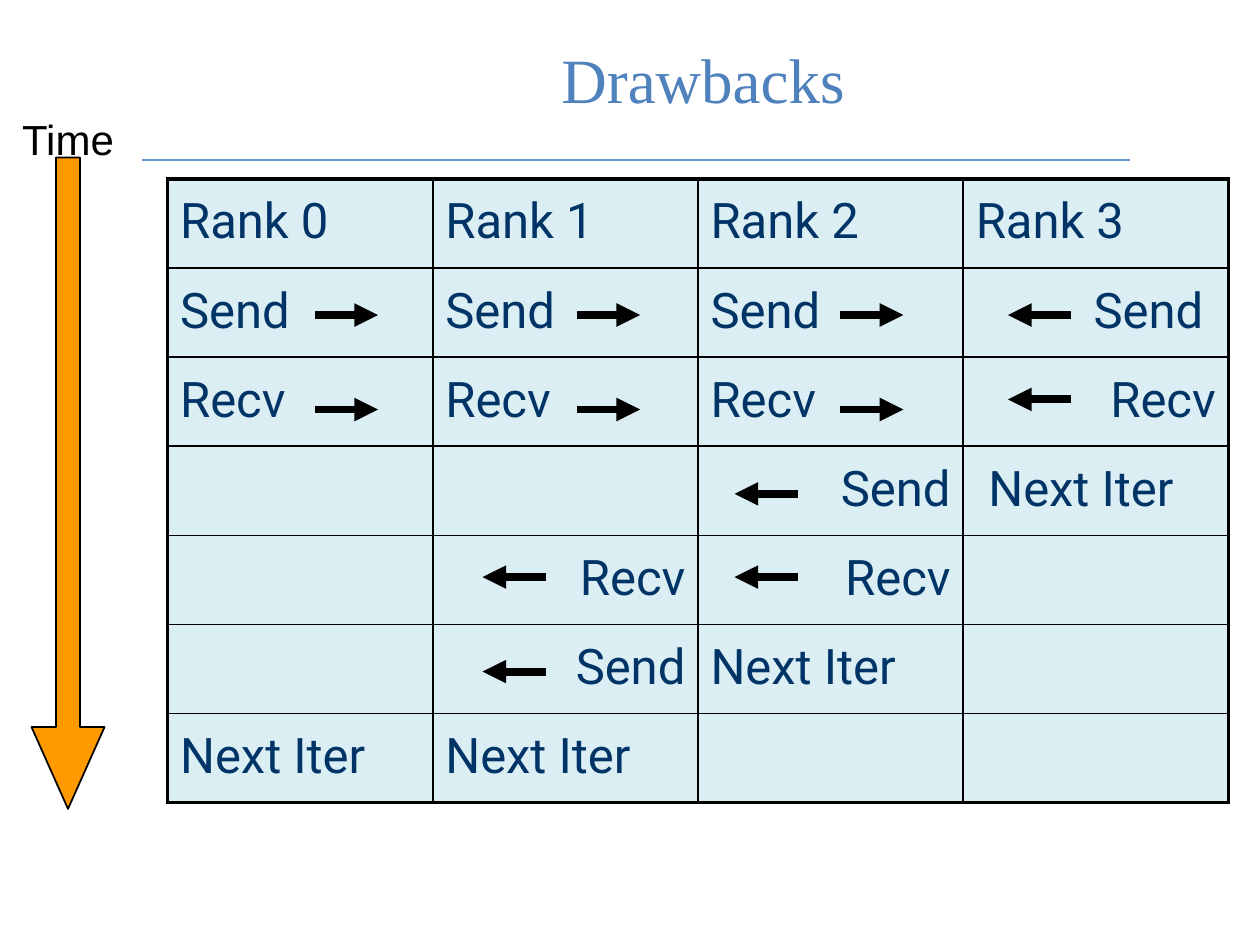
from lxml.etree import SubElement
from pptx import Presentation
from pptx.dml.color import RGBColor
from pptx.enum.shapes import MSO_CONNECTOR as Connector, MSO_SHAPE as Shape
from pptx.enum.text import MSO_ANCHOR as Anchor, PP_ALIGN as Align
from pptx.oxml.ns import qn
from pptx.util import Inches, Pt

BLACK = RGBColor(0x00, 0x00, 0x00)
TITLE_BLUE = RGBColor(0x4F, 0x81, 0xBD)
RULE_BLUE = RGBColor(0x66, 0x99, 0xCC)
NAVY = RGBColor(0x00, 0x33, 0x66)
PALE_BLUE = RGBColor(0xDB, 0xEE, 0xF4)
ORANGE = RGBColor(0xFF, 0x99, 0x00)

ROWS = [
    ["Rank 0", "Rank 1", "Rank 2", "Rank 3"],
    ["Send", "Send", "Send", "Send"],
    ["Recv", "Recv", "Recv", "Recv"],
    ["", "", "Send", "Next Iter"],
    ["", "Recv", "Recv", ""],
    ["", "Send", "Next Iter", ""],
    ["Next Iter", "Next Iter", "", ""],
]
RIGHT_ALIGNED = {(1, 3), (2, 3), (3, 2), (4, 1), (4, 2), (5, 1)}
INDENTED = {(1, 3), (3, 3)}
ARROW_LENGTH = 0.5
RIGHTWARD = [(x, y) for y in (2.5, 3.25) for x in (2.5, 4.58, 6.67)]
LEFTWARD = [(8.5, 2.5), (8.5, 3.17), (6.33, 3.92),
            (6.33, 4.58), (4.33, 4.58), (4.33, 5.33)]


def add_run(para, text, font, size, color):
    """Append a formatted run to a paragraph."""
    span = para.add_run()
    span.text = text
    span.font.name = font
    span.font.size = Pt(size)
    span.font.color.rgb = color


def add_line(page, start, end, color, width, arrow=False):
    """Draw a straight line between two points in inches."""
    line = page.shapes.add_connector(
        Connector.STRAIGHT, *(Inches(value) for value in (*start, *end)))
    line.line.color.rgb = color
    line.line.width = Pt(width)
    if arrow:
        SubElement(line.line._get_or_add_ln(), qn("a:tailEnd"), type="triangle")
    SubElement(line._element.spPr, qn("a:effectLst"))


def add_title(page, left, top, width, height):
    """Place the title and the rule below it."""
    add_line(page, (1.13, 1.27), (8.97, 1.27), RULE_BLUE, 0.75)
    title = page.shapes.title
    title.left, title.top = Inches(left), Inches(top)
    title.width, title.height = Inches(width), Inches(height)
    frame = title.text_frame
    frame.vertical_anchor = Anchor.MIDDLE
    para = frame.paragraphs[0]
    para.alignment = Align.CENTER
    add_run(para, "Drawbacks", "Times New Roman", 36, TITLE_BLUE)


def set_borders(cell, outer_sides):
    """Give a cell thin borders, thick on the table's outer sides."""
    properties = cell._tc.get_or_add_tcPr()
    for side in "LRTB":
        width = Pt(2.25 if side in outer_sides else 1)
        border = SubElement(properties, qn(f"a:ln{side}"), w=str(int(width)))
        fill = SubElement(border, qn("a:solidFill"))
        SubElement(fill, qn("a:srgbClr"), val=str(BLACK))


def fill_cell(cell, text, right_aligned, indented):
    """Fill a cell and write its text."""
    cell.fill.solid()
    cell.fill.fore_color.rgb = PALE_BLUE
    cell.vertical_anchor = Anchor.MIDDLE
    if not text:
        return
    para = cell.text_frame.paragraphs[0]
    para.line_spacing = 0.9
    para.alignment = Align.RIGHT if right_aligned else Align.LEFT
    if indented and right_aligned:
        cell.margin_right = Inches(0.2)
    elif indented:
        cell.margin_left = Inches(0.2)
    add_run(para, text, "Roboto", 28, NAVY)


def add_schedule(page, left, top, width, height):
    """Build the table of rank steps."""
    row_count, column_count = len(ROWS), len(ROWS[0])
    table = page.shapes.add_table(
        row_count, column_count, Inches(left), Inches(top),
        Inches(width), Inches(height)).table
    table.first_row = table.horz_banding = False
    for r, row in enumerate(ROWS):
        for c, text in enumerate(row):
            cell = table.cell(r, c)
            edges = {"L": c == 0, "R": c == column_count - 1,
                     "T": r == 0, "B": r == row_count - 1}
            set_borders(cell, {side for side, outer in edges.items() if outer})
            fill_cell(cell, text, (r, c) in RIGHT_ALIGNED, (r, c) in INDENTED)


def add_message_arrows(page):
    """Draw the arrows beside the send and receive steps."""
    for starts, length in ((RIGHTWARD, ARROW_LENGTH), (LEFTWARD, -ARROW_LENGTH)):
        for x, y in starts:
            add_line(page, (x, y), (x + length, y), BLACK, 4.5, arrow=True)


def add_time_axis(page, left, top, width, height):
    """Draw the downward time arrow with its label above."""
    arrow = page.shapes.add_shape(
        Shape.DOWN_ARROW, Inches(left), Inches(top), Inches(width), Inches(height))
    arrow.adjustments[0] = 0.33
    arrow.adjustments[1] = 1.12
    arrow.shadow.inherit = False
    arrow.fill.solid()
    arrow.fill.fore_color.rgb = ORANGE
    arrow.line.color.rgb = BLACK
    arrow.line.width = Pt(1)

    label_width = 1.42
    box = page.shapes.add_textbox(
        Inches(left + (width - label_width) / 2), Inches(top - 0.4),
        Inches(label_width), Inches(0.5))
    box.text_frame.word_wrap = True
    para = box.text_frame.paragraphs[0]
    para.alignment = Align.CENTER
    add_run(para, "Time", "Arial", 24, BLACK)


def main():
    """Build and save the deck."""
    deck = Presentation()
    deck.slide_width, deck.slide_height = Inches(10), Inches(7.5)
    page = deck.slides.add_slide(deck.slide_layouts.get_by_name("Title Only"))
    add_title(page, 2, 0, 7.16, 1.25)
    add_schedule(page, 1.33, 1.42, 8.42, 4.95)
    add_message_arrows(page)
    add_time_axis(page, 0.25, 1.25, 0.58, 5.17)
    deck.save("out.pptx")


if __name__ == "__main__":
    main()
